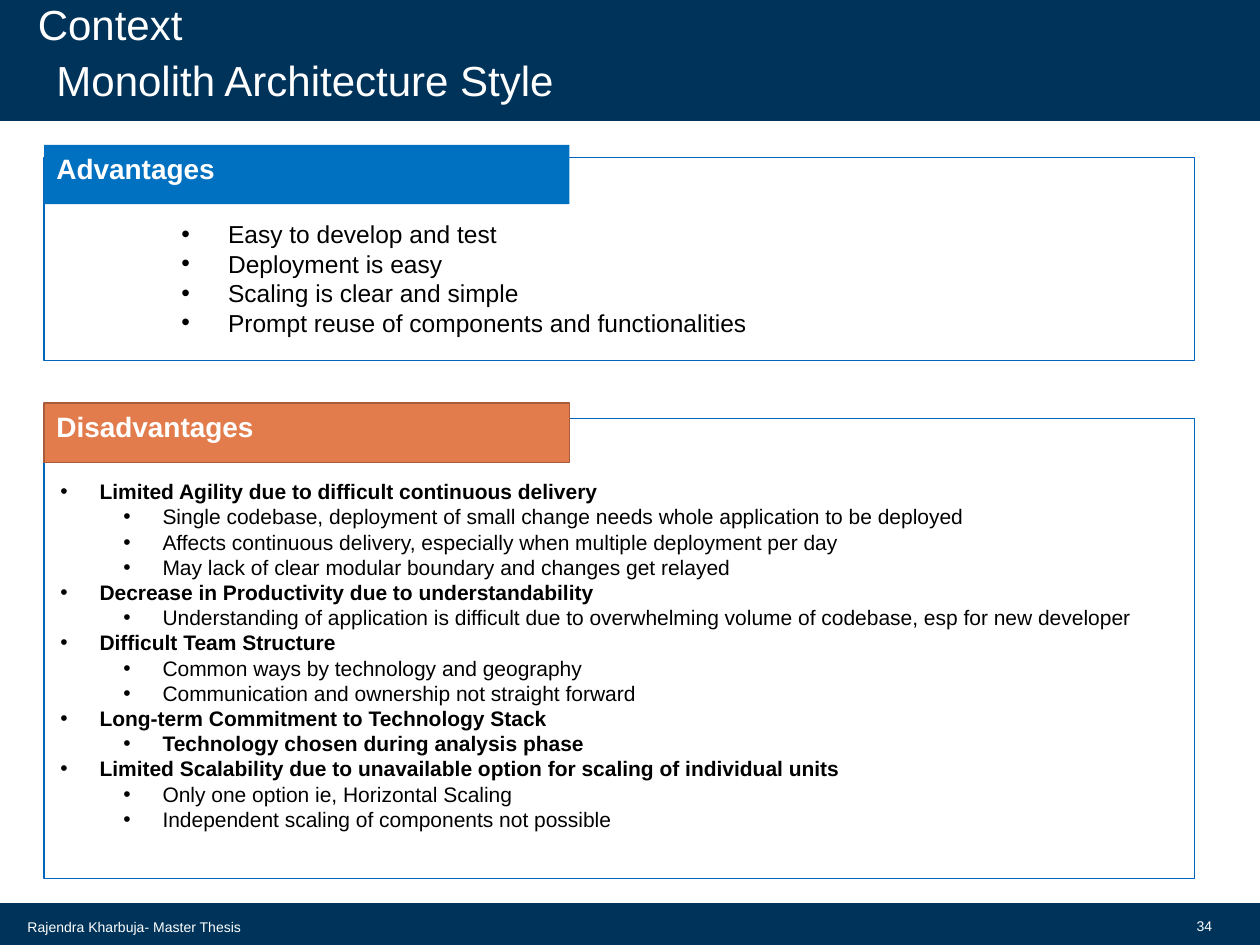
from dataclasses import dataclass

from lxml import etree
from pptx import Presentation
from pptx import util as u
from pptx.dml.color import RGBColor
from pptx.enum import shapes, text
from pptx.oxml.ns import qn

NAVY = RGBColor(0x00, 0x33, 0x59)
FRAME_BLUE = RGBColor(0x00, 0x65, 0xBD)
HEADING_BLUE = RGBColor(0x00, 0x70, 0xC0)
ORANGE = RGBColor(0xE3, 0x7C, 0x4D)
BROWN = RGBColor(0xA8, 0x5C, 0x39)
WHITE = RGBColor(0xFF, 0xFF, 0xFF)
BLACK = RGBColor(0x00, 0x00, 0x00)
PANEL_LEFT = 0.35


@dataclass(frozen=True)
class Box:
    left: float
    top: float
    width: float
    height: float


@dataclass(frozen=True)
class Item:
    words: str
    level: int = 0
    bold: bool = False


@dataclass(frozen=True)
class Panel:
    heading: str
    heading_top: float
    fill: RGBColor
    line: RGBColor | None
    frame: Box
    list_box: Box
    size: int
    hanging: float
    items: list[Item]


PANELS = [
    Panel("Advantages", 1.15, HEADING_BLUE, None,
          Box(PANEL_LEFT, 1.25, 9.13, 1.61), Box(1.34, 1.69, 5, 1.26), 14, 0.37,
          [Item("Easy to develop and test"),
           Item("Deployment is easy"),
           Item("Scaling is clear and simple"),
           Item("Prompt reuse of components and functionalities")]),
    Panel("Disadvantages", 3.2, ORANGE, BROWN,
          Box(PANEL_LEFT, 3.32, 9.13, 3.65), Box(0.38, 3.75, 9, 3.09), 12, 0.31,
          [Item("Limited Agility due to difficult continuous delivery", bold=True),
           Item("Single codebase, deployment of small change needs whole application to be deployed", 1),
           Item("Affects continuous delivery, especially when multiple deployment per day", 1),
           Item("May lack of clear modular boundary and changes get relayed", 1),
           Item("Decrease in Productivity due to understandability", bold=True),
           Item("Understanding of application is difficult due to overwhelming volume of codebase, "
                "esp for new developer", 1),
           Item("Difficult Team Structure", bold=True),
           Item("Common ways by technology and geography", 1),
           Item("Communication and ownership not straight forward", 1),
           Item("Long-term Commitment to Technology Stack", bold=True),
           Item("Technology chosen during analysis phase", 1, True),
           Item("Limited Scalability due to unavailable option for scaling of individual units", bold=True),
           Item("Only one option ie, Horizontal Scaling", 1),
           Item("Independent scaling of components not possible", 1)]),
]


def lengths(box: Box) -> list[int]:
    return [u.Inches(value) for value in (box.left, box.top, box.width, box.height)]


def place(placeholder, box: Box) -> None:
    """Move a placeholder and bring it to the front."""
    placeholder.left, placeholder.top, placeholder.width, placeholder.height = lengths(box)
    element = placeholder.element
    element.getparent().append(element)


def format_font(paragraph, size: int, color: RGBColor, bold: bool = False) -> None:
    for name, value in {"name": "Arial", "size": u.Pt(size), "bold": bold}.items():
        setattr(paragraph.font, name, value)
    paragraph.font.color.rgb = color


def format_frame(frame, anchor, inset: float = 0.05) -> None:
    values = {"word_wrap": True, "auto_size": text.MSO_AUTO_SIZE.NONE,
              "vertical_anchor": anchor,
              "margin_left": u.Inches(0.1), "margin_right": u.Inches(0.1),
              "margin_top": u.Inches(inset), "margin_bottom": u.Inches(inset)}
    for name, value in values.items():
        setattr(frame, name, value)


def write_line(shape, words: str, size: int, color: RGBColor, anchor,
               inset: float = 0.05, bold: bool = False, align=text.PP_ALIGN.LEFT) -> None:
    format_frame(shape.text_frame, anchor, inset)
    paragraph = shape.text_frame.paragraphs[0]
    paragraph.text = words
    paragraph.alignment = align
    format_font(paragraph, size, color, bold)


def add_rectangle(slide, box: Box, fill: RGBColor | None,
                  line: RGBColor | None, line_width: float = 0.75):
    shape = slide.shapes.add_shape(shapes.MSO_SHAPE.RECTANGLE, *lengths(box))
    shape.shadow.inherit = False
    if fill is None:
        shape.fill.background()
    else:
        shape.fill.solid()
        shape.fill.fore_color.rgb = fill
    if line is None:
        shape.line.fill.background()
    else:
        shape.line.color.rgb = line
        shape.line.width = u.Pt(line_width)
    return shape


def write_list(placeholder, panel: Panel) -> None:
    frame = placeholder.text_frame
    format_frame(frame, text.MSO_ANCHOR.TOP)
    for index, item in enumerate(panel.items):
        paragraph = frame.paragraphs[0] if index == 0 else frame.add_paragraph()
        paragraph.text = item.words
        paragraph.level = item.level
        paragraph.space_before = u.Pt(0)
        properties = paragraph._p.get_or_add_pPr()
        properties.set("marL", str(u.Inches(panel.hanging + 0.5 * item.level)))
        properties.set("indent", str(-u.Inches(panel.hanging)))
        etree.SubElement(properties, qn("a:buFont"), typeface="Arial")
        etree.SubElement(properties, qn("a:buChar"), char="•")
        format_font(paragraph, panel.size, BLACK, item.bold)


def draw_panel(slide, panel: Panel, placeholder) -> None:
    add_rectangle(slide, panel.frame, None, FRAME_BLUE)
    heading = add_rectangle(slide, Box(PANEL_LEFT, panel.heading_top, 4.17, 0.47),
                            panel.fill, panel.line, 0.85)
    write_line(heading, panel.heading, 16, WHITE, text.MSO_ANCHOR.TOP, bold=True)
    place(placeholder, panel.list_box)
    write_list(placeholder, panel)


def main() -> None:
    presentation = Presentation()
    presentation.slide_width, presentation.slide_height = u.Inches(10), u.Inches(7.5)
    slide = presentation.slides.add_slide(presentation.slide_layouts.get_by_name("Two Content"))
    title, *lists = list(slide.placeholders)

    for band in (Box(0, 7.18, 10, 0.32), Box(0, 0, 10, 0.95)):
        add_rectangle(slide, band, NAVY, NAVY, 1.35)

    place(title, Box(0.2, 0, 8.24, 0.39))
    write_line(title, "Context", 24, WHITE, text.MSO_ANCHOR.BOTTOM, 0)
    subtitle = slide.shapes.add_textbox(*lengths(Box(0.35, 0.44, 8.24, 0.39)))
    write_line(subtitle, "Monolith Architecture Style", 24, WHITE, text.MSO_ANCHOR.BOTTOM, 0)

    for panel, placeholder in zip(PANELS, lists):
        draw_panel(slide, panel, placeholder)

    footer = slide.shapes.add_textbox(*lengths(Box(0.12, 7.2, 2.13, 0.31)))
    write_line(footer, "Rajendra Kharbuja- Master Thesis", 8, WHITE, text.MSO_ANCHOR.MIDDLE)
    page_number = slide.shapes.add_textbox(*lengths(Box(9.22, 7.19, 0.5, 0.32)))
    write_line(page_number, "34", 8, WHITE, text.MSO_ANCHOR.MIDDLE, align=text.PP_ALIGN.RIGHT)

    presentation.save("out.pptx")


if __name__ == "__main__":
    main()
